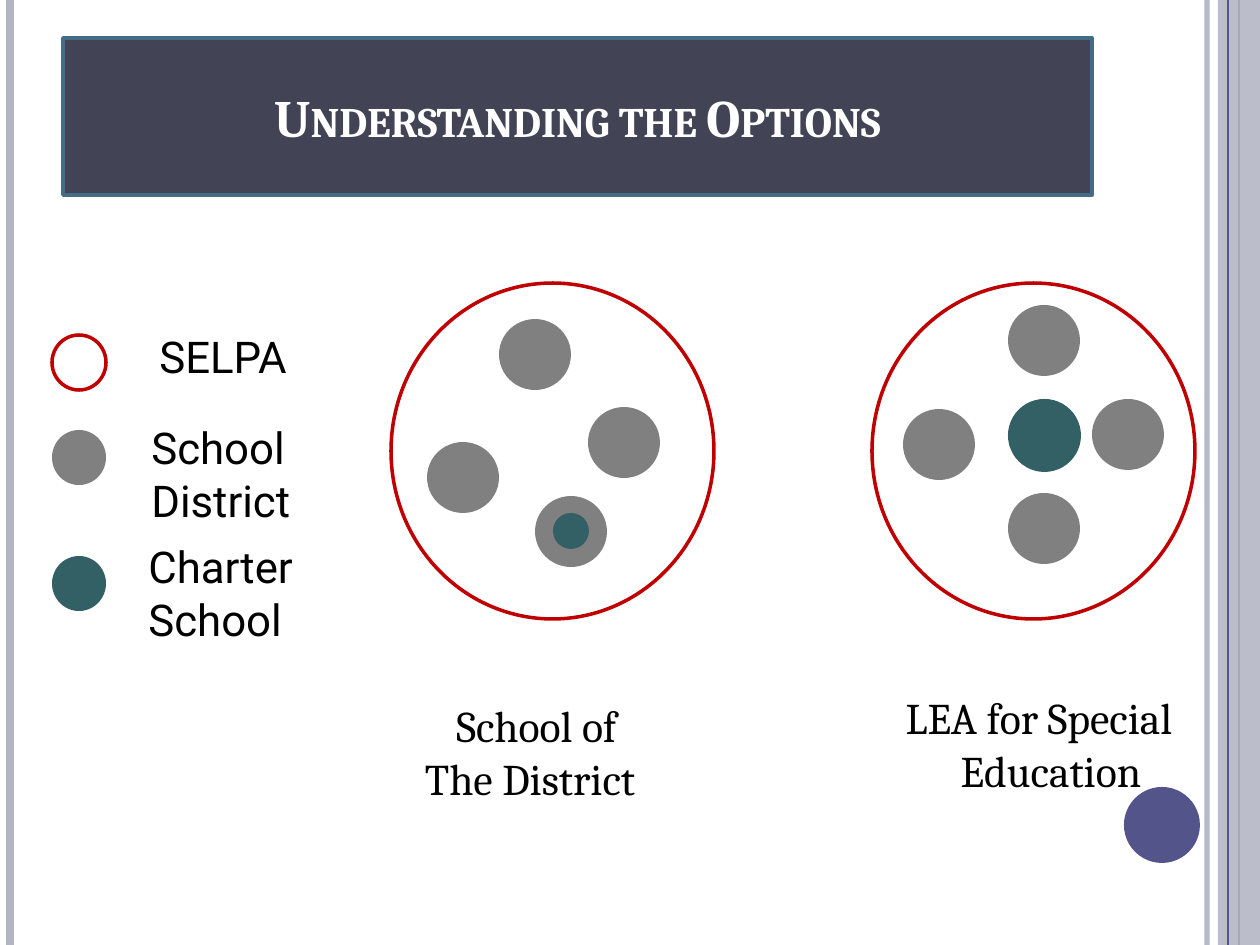
from dataclasses import dataclass

from lxml.etree import SubElement
from pptx import Presentation
from pptx.dml.color import RGBColor
from pptx.enum.shapes import MSO_CONNECTOR, MSO_SHAPE
from pptx.enum.text import MSO_ANCHOR, PP_ALIGN
from pptx.oxml.ns import qn
from pptx.util import Pt

PX = 914400 / 126
WIDTH, HEIGHT = 1260, 945


@dataclass(frozen=True)
class Theme:
    white: str = "FFFFFF"
    black: str = "000000"
    band: str = "B3B4C4"
    accent: str = "53548A"
    title_fill: str = "424456"
    title_line: str = "446C86"
    selpa: str = "C00000"
    district: str = "808080"
    charter: str = "326065"
    serif: str = "Cambria"
    sans: str = "Roboto"
    title_size: int = 30
    body_size: int = 25
    outline: int = 2


THEME = Theme()


def px(length):
    return round(length * PX)


def rgb(color):
    return RGBColor.from_string(color)


def set_alpha(fill_parent, percent):
    color = next(fill_parent.iter(qn("a:srgbClr")))
    SubElement(color, qn("a:alpha")).set("val", str(percent * 1000))


def add_block(slide, kind, box, fill, line=None):
    block = slide.shapes.add_shape(kind, *map(px, box))
    block.shadow.inherit = False
    block.fill.solid()
    block.fill.fore_color.rgb = rgb(fill)
    if line:
        block.line.color.rgb = rgb(line)
        block.line.width = Pt(THEME.outline)
    else:
        block.line.fill.background()
    return block


def add_circle(slide, box, fill, line=None):
    return add_block(slide, MSO_SHAPE.OVAL, box, fill, line)


def add_rule(slide, x, color, weight, alpha=100):
    rule = slide.shapes.add_connector(
        MSO_CONNECTOR.STRAIGHT, px(x), 0, px(x), px(HEIGHT))
    rule.line.color.rgb = rgb(color)
    rule.line.width = Pt(weight)
    if alpha < 100:
        set_alpha(rule.line._ln, alpha)
    SubElement(rule._element.spPr, qn("a:effectLst"))


def style(paragraph, font_name, size, color, align):
    paragraph.alignment = align
    paragraph.font.name = font_name
    paragraph.font.size = Pt(size)
    paragraph.font.color.rgb = rgb(color)


def add_text(slide, box, lines, font_name, align=PP_ALIGN.LEFT):
    """Each line is its text, left margin and first-line indent."""
    frame = slide.shapes.add_textbox(*map(px, box)).text_frame
    frame.word_wrap = True
    for number, (text, margin, indent) in enumerate(lines):
        paragraph = frame.add_paragraph() if number else frame.paragraphs[0]
        paragraph.text = text
        style(paragraph, font_name, THEME.body_size, THEME.black, align)
        properties = paragraph._p.get_or_add_pPr()
        properties.set("marL", str(px(margin)))
        properties.set("indent", str(px(indent)))


def add_frame(slide):
    # Vertical rules and band at the slide edges
    add_rule(slide, 1207, THEME.band, 3, alpha=93)
    add_rule(slide, 10, THEME.band, 4.5)
    add_rule(slide, 1239, THEME.accent, 1.5)
    band = add_block(slide, MSO_SHAPE.RECTANGLE,
                     (1218, 0, WIDTH - 1218, HEIGHT), THEME.band)
    set_alpha(band._element.spPr, 87)
    add_rule(slide, 1228, THEME.accent, 0.75)
    # Page-number disc
    add_circle(slide, (1124, 787, 76, 76), THEME.accent)


def add_title(slide, box):
    banner = add_block(slide, MSO_SHAPE.RECTANGLE, box,
                       THEME.title_fill, THEME.title_line)
    frame = banner.text_frame
    frame.vertical_anchor = MSO_ANCHOR.MIDDLE
    heading = frame.paragraphs[0]
    heading.text = "Understanding the Options"
    style(heading, THEME.serif, THEME.title_size, THEME.white, PP_ALIGN.CENTER)
    heading.font.bold = True
    heading.runs[0]._r.get_or_add_rPr().set("cap", "small")


def add_legend(slide, left, top):
    # Symbol top, fill, outline; label x, y, height and lines
    entries = [
        (0, THEME.white, THEME.selpa, 95, -11, 65, ["SELPA"]),
        (95, THEME.district, None, 87, 80, 118, ["School District"]),
        (221, THEME.charter, None, 84, 199, 118, ["Charter", "School"]),
    ]
    for symbol_y, fill, line, x, y, height, labels in entries:
        add_circle(slide, (left, top + symbol_y, 54, 55), fill, line)
        add_text(slide, (left + x, top + y, 182, height),
                 [(label, 0, 0) for label in labels], THEME.sans)


def add_option(slide, left, top, districts, charter):
    add_circle(slide, (left, top, 323, 336), THEME.white, THEME.selpa)
    for x, y in districts:
        add_circle(slide, (left + x, top + y, 72, 71), THEME.district)
    x, y, size = charter
    add_circle(slide, (left + x, top + y, size, size), THEME.charter)


def add_caption(slide, box, lines):
    add_text(slide, box, lines, THEME.serif, PP_ALIGN.CENTER)


def main():
    presentation = Presentation()
    presentation.slide_width = px(WIDTH)
    presentation.slide_height = px(HEIGHT)
    slide = presentation.slides.add_slide(presentation.slide_layouts[6])

    add_frame(slide)
    add_title(slide, (63, 38, 1029, 157))
    add_legend(slide, 52, 335)

    # Charter as a school of the district: inside a district circle
    add_option(slide, 391, 283,
               [(108, 36), (197, 124), (36, 159), (144, 213)], (162, 230, 36))
    add_caption(slide, (231, 693, 598, 118),
                [("School of", 13, 0), ("The District", 0, 0)])

    # Charter as its own LEA: beside the districts
    add_option(slide, 872, 283,
               [(136, 22), (220, 116), (31, 126), (136, 210)], (136, 116, 73))
    add_caption(slide, (850, 685, 378, 118),
                [("LEA for Special Education", 24, -24)])

    presentation.save("out.pptx")


if __name__ == "__main__":
    main()
